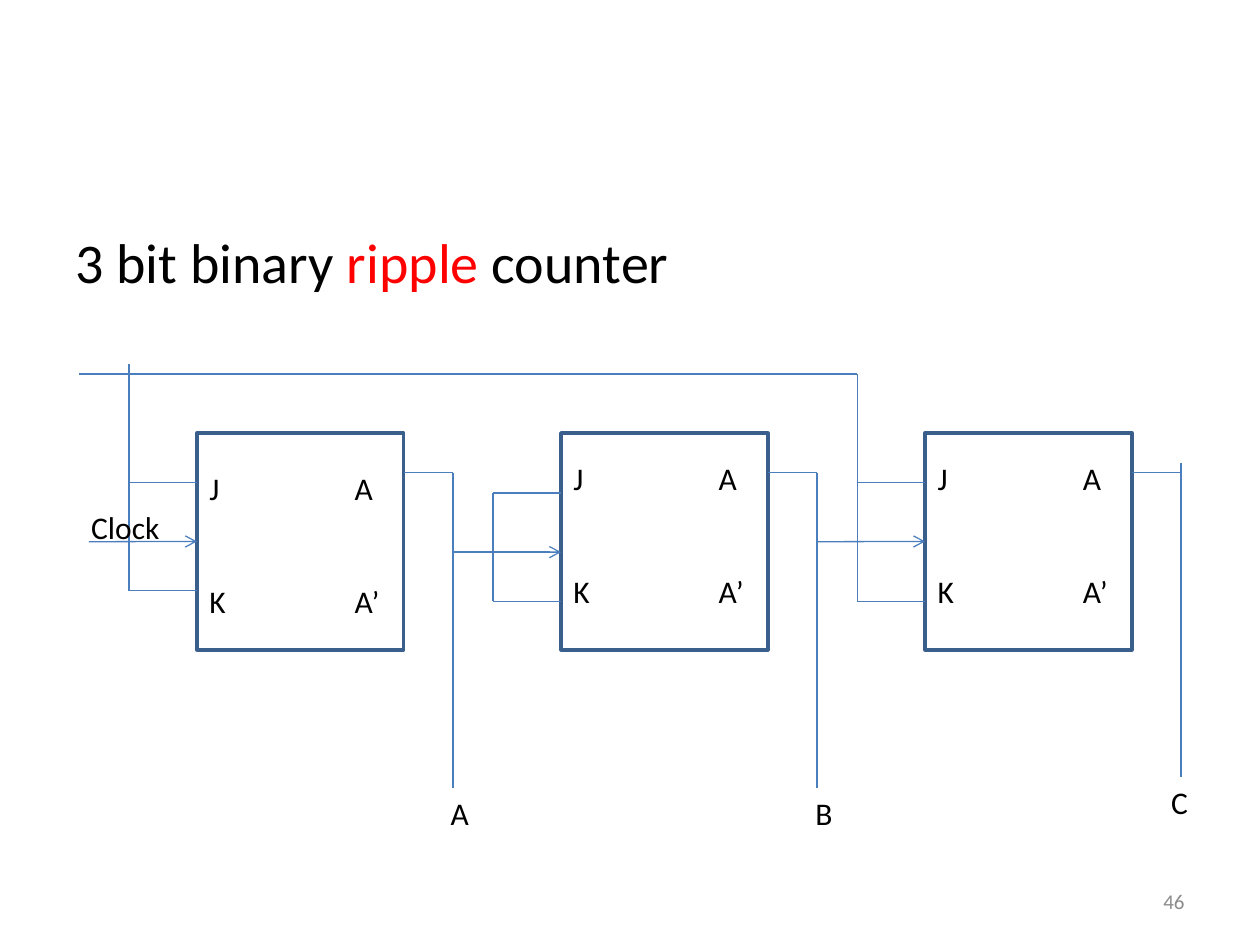
from dataclasses import dataclass

from lxml.etree import SubElement
from pptx import Presentation
from pptx.dml.color import RGBColor
from pptx.enum.shapes import MSO_CONNECTOR, MSO_SHAPE
from pptx.enum.text import MSO_ANCHOR, PP_ALIGN
from pptx.oxml.ns import qn
from pptx.util import Cm, Pt

BLOCK_WIDTH, BLOCK_HEIGHT, BLOCK_TOP = 4.17, 4.37, 8.73
FIRST_LEFT, PITCH = 3.97, 7.34
FEED_GAP, OUTPUT_GAP = 1.37, 0.99
RAIL_LEFT, RAIL_Y, STUB_Y = 1.59, 7.54, 9.53
LABEL_WIDTH, LABEL_HEIGHT = 2.38, 1.02


def color(value):
    return RGBColor.from_string(value)


@dataclass
class FlipFlop:
    feed_top: float
    j_y: float
    k_y: float
    clock_y: float
    pins_top: float
    output_top: float
    output_bottom: float
    output_name: str
    label_shift: float


FLIP_FLOPS = [
    FlipFlop(7.34, 9.73, 11.91, 10.92, 9.33, STUB_Y, 15.88, "A", 0.14),
    FlipFlop(9.94, 9.94, 12.12, 11.13, 9.13, STUB_Y, 15.88, "B", 0.14),
    FlipFlop(RAIL_Y, 9.73, 12.12, 10.92, 9.13, 9.33, 15.66, "C", -0.03),
]


class SlideBuilder:
    font_name = "Calibri"
    text_color = "000000"
    accent_color = "FF0000"
    number_color = "8C8C8C"
    block_fill = "FFFFFF"
    block_line = "3A5F8C"
    wire_color = "4B7EBC"

    def __init__(self, slide):
        self.slide = slide

    def format_paragraph(self, paragraph, size, alignment, font_color=None):
        paragraph.alignment = alignment
        paragraph.font.name = self.font_name
        paragraph.font.size = Pt(size)
        if font_color:
            paragraph.font.color.rgb = color(font_color)

    def title(self, parts, left, top, width, height):
        shape = self.slide.shapes.title
        shape.left, shape.top = Cm(left), Cm(top)
        shape.width, shape.height = Cm(width), Cm(height)
        shape.text_frame.vertical_anchor = MSO_ANCHOR.TOP
        paragraph = shape.text_frame.paragraphs[0]
        for text, font_color in parts:
            run = paragraph.add_run()
            run.text = text
            run.font.color.rgb = color(font_color)
        self.format_paragraph(paragraph, 32, PP_ALIGN.LEFT)

    def block(self, left, top, width, height):
        shape = self.slide.shapes.add_shape(
            MSO_SHAPE.RECTANGLE, Cm(left), Cm(top), Cm(width), Cm(height))
        shape.shadow.inherit = False
        shape.fill.solid()
        shape.fill.fore_color.rgb = color(self.block_fill)
        shape.line.color.rgb = color(self.block_line)
        shape.line.width = Pt(2)
        return shape

    def wire(self, start_x, start_y, end_x, end_y, arrow=False):
        connector = self.slide.shapes.add_connector(
            MSO_CONNECTOR.STRAIGHT, Cm(start_x), Cm(start_y), Cm(end_x), Cm(end_y))
        connector.line.color.rgb = color(self.wire_color)
        connector.line.width = Pt(0.75)
        if arrow:
            line = connector.line._get_or_add_ln()
            SubElement(line, qn("a:tailEnd"), type="arrow")
        SubElement(connector._element.spPr, qn("a:effectLst"))
        return connector

    def text(self, lines, left, top, width, height, size=18, alignment=PP_ALIGN.LEFT,
             font_color=None, anchor=MSO_ANCHOR.TOP, gap=0, tab=None):
        box = self.slide.shapes.add_textbox(Cm(left), Cm(top), Cm(width), Cm(height))
        frame = box.text_frame
        frame.word_wrap = True
        frame.vertical_anchor = anchor
        for index, line in enumerate(lines):
            paragraph = frame.add_paragraph() if index else frame.paragraphs[0]
            paragraph.text = line
            if index:
                paragraph.space_before = Pt(gap)
            if tab:
                tabs = SubElement(paragraph._p.get_or_add_pPr(), qn("a:tabLst"))
                SubElement(tabs, qn("a:tab"), pos=str(Cm(tab)), algn="l")
            self.format_paragraph(paragraph, size, alignment, font_color or self.text_color)


def draw_flip_flop(builder, flip_flop, left, clock_start):
    block = builder.block(left, BLOCK_TOP, BLOCK_WIDTH, BLOCK_HEIGHT)
    right = left + BLOCK_WIDTH
    feed_x, output_x = left - FEED_GAP, right + OUTPUT_GAP
    builder.wire(feed_x, flip_flop.feed_top, feed_x, flip_flop.k_y)
    for y in (flip_flop.j_y, flip_flop.k_y):
        builder.wire(feed_x, y, left, y)
    builder.wire(right, STUB_Y, output_x, STUB_Y)
    builder.wire(output_x, flip_flop.output_top, output_x, flip_flop.output_bottom)
    clock = builder.wire(clock_start, flip_flop.clock_y, left, flip_flop.clock_y, arrow=True)
    if abs(flip_flop.clock_y - BLOCK_TOP - BLOCK_HEIGHT / 2) < 0.02:
        clock.end_connect(block, 1)
    builder.text(["J\tA", "K\tA’"], left, flip_flop.pins_top, 3.97, 3.33, gap=43, tab=2.93)
    builder.text([flip_flop.output_name], output_x + flip_flop.label_shift - LABEL_WIDTH / 2,
                 flip_flop.output_bottom, LABEL_WIDTH, LABEL_HEIGHT, alignment=PP_ALIGN.CENTER)
    return output_x


def main():
    presentation = Presentation()
    presentation.slide_width, presentation.slide_height = Cm(25.4), Cm(19.05)
    builder = SlideBuilder(presentation.slides.add_slide(presentation.slide_layouts[5]))
    builder.title([("3 bit binary ", builder.text_color), ("ripple ", builder.accent_color),
                   ("counter", builder.text_color)], 1.27, 4.45, 22.86, 1.8)
    builder.wire(RAIL_LEFT, RAIL_Y, FIRST_LEFT + 2 * PITCH - FEED_GAP, RAIL_Y)
    clock_start = 1.79
    for index, flip_flop in enumerate(FLIP_FLOPS):
        clock_start = draw_flip_flop(builder, flip_flop, FIRST_LEFT + index * PITCH, clock_start)
    builder.text(["Clock"], RAIL_LEFT, 10.12, LABEL_WIDTH, LABEL_HEIGHT)
    builder.text(["46"], 18.2, 17.66, 5.93, 1.01, size=12, alignment=PP_ALIGN.RIGHT,
                 font_color=builder.number_color, anchor=MSO_ANCHOR.MIDDLE)
    presentation.save("out.pptx")


if __name__ == "__main__":
    main()
